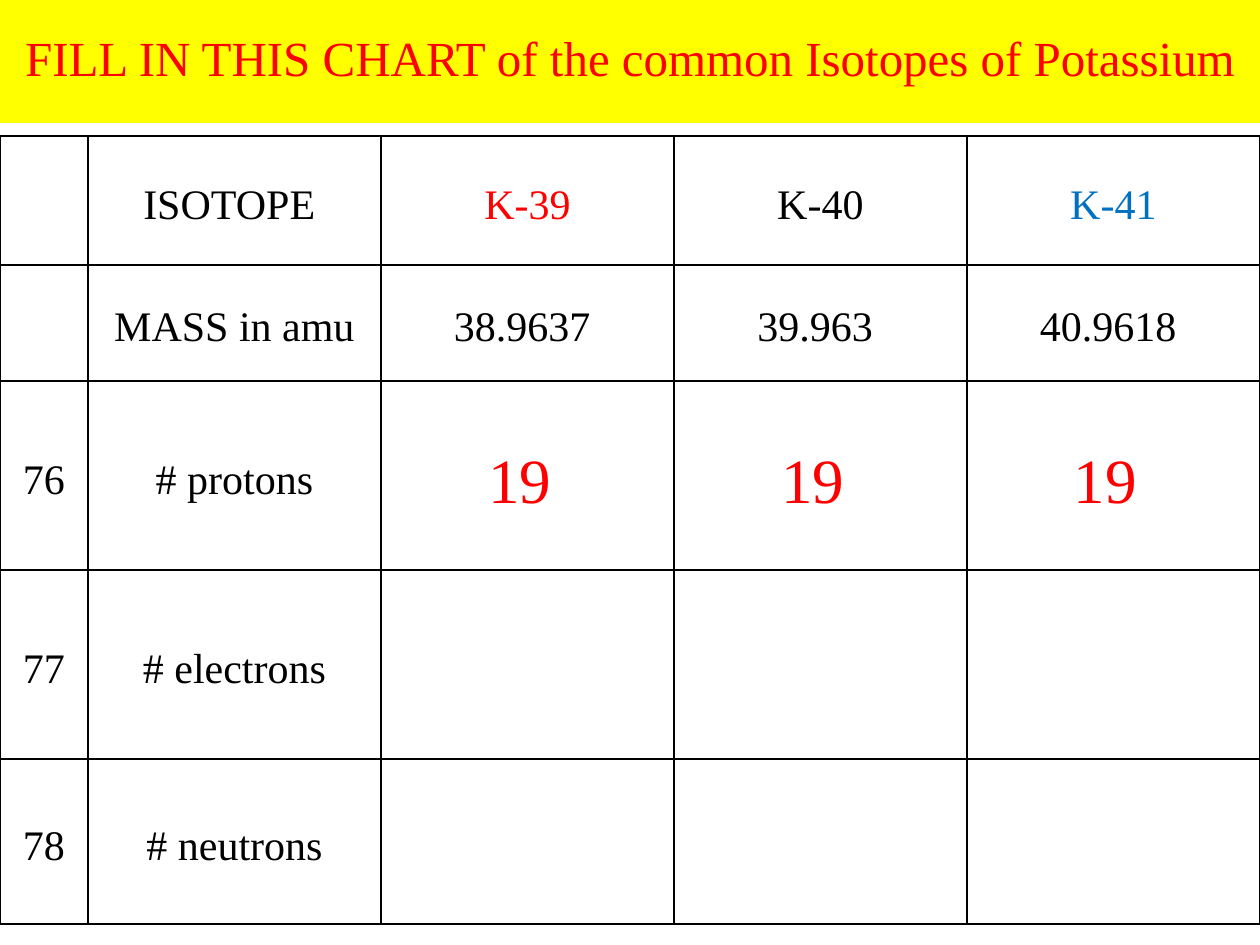
from lxml import etree
from pptx import Presentation
from pptx import util as u
from pptx.dml.color import RGBColor
from pptx.enum import text
from pptx.oxml import ns

BLACK = RGBColor(0x00, 0x00, 0x00)
RED = RGBColor(0xFF, 0x00, 0x00)
BLUE = RGBColor(0x00, 0x70, 0xC0)
YELLOW = RGBColor(0xFF, 0xFF, 0x00)

COLUMN_WIDTHS = [88] + [293] * 4
ROW_HEIGHTS = [129, 116, 189, 189, 165]
ROWS = [
    ["", "ISOTOPE ", "K-39", "K-40", "K-41"],
    ["", "MASS in amu", "38.9637 ", "39.963 ", "40.9618 "],
    ["76", "# protons", "19 ", "19 ", "19 "],
    ["77", "# electrons", "", "", ""],
    ["78", "# neutrons", "", "", ""],
]
ISOTOPE_COLORS = {"K-39": RED, "K-41": BLUE}


def px(length):
    return u.Emu(round(length * 914400 / 126))


class SlideBuilder:
    font = "Times New Roman"
    cell_margin = 5

    def __init__(self, slide):
        self.slide = slide

    def add_run(self, paragraph, content, size, color):
        paragraph.alignment = text.PP_ALIGN.CENTER
        run = paragraph.add_run()
        run.text = content
        run.font.name = self.font
        run.font.size = u.Pt(size)
        run.font.color.rgb = color

    def title(self, content, width, height):
        shape = self.slide.shapes.title
        shape.left, shape.top = px(0), px(0)
        shape.width, shape.height = px(width), px(height)
        shape.fill.solid()
        shape.fill.fore_color.rgb = YELLOW
        frame = shape.text_frame
        frame.auto_size = text.MSO_AUTO_SIZE.NONE
        frame.vertical_anchor = text.MSO_ANCHOR.TOP
        frame.margin_top = px(28)
        self.add_run(frame.paragraphs[0], content, 28, RED)

    def table(self, top):
        frame = self.slide.shapes.add_table(
            len(ROWS), len(COLUMN_WIDTHS), px(0), px(top),
            px(sum(COLUMN_WIDTHS)), px(sum(ROW_HEIGHTS)))
        table = frame.table
        table.first_row = table.horz_banding = False
        for column, width in zip(table.columns, COLUMN_WIDTHS):
            column.width = px(width)
        for row, height, contents in zip(table.rows, ROW_HEIGHTS, ROWS):
            row.height = px(height)
            for cell, content in zip(row.cells, contents):
                self.cell(cell, content)

    def cell(self, cell, content):
        cell.fill.background()
        cell.vertical_anchor = text.MSO_ANCHOR.MIDDLE
        cell.margin_left = cell.margin_right = px(self.cell_margin)
        cell.margin_top = cell.margin_bottom = px(self.cell_margin)
        self.borders(cell)
        if content:
            paragraph = cell.text_frame.paragraphs[0]
            paragraph.line_spacing = 1.19
            paragraph.space_after = u.Pt(6)
            is_answer = content.strip() == "19"
            color = RED if is_answer else ISOTOPE_COLORS.get(content, BLACK)
            self.add_run(paragraph, content, 36 if is_answer else 24, color)

    def borders(self, cell):
        properties = cell._tc.get_or_add_tcPr()
        for position, side in enumerate(("L", "R", "T", "B")):
            line = etree.Element(ns.qn(f"a:ln{side}"), w=str(u.Pt(1)))
            fill = etree.SubElement(line, ns.qn("a:solidFill"))
            etree.SubElement(fill, ns.qn("a:srgbClr"), val=str(BLACK))
            properties.insert(position, line)


def main():
    presentation = Presentation()
    presentation.slide_width, presentation.slide_height = px(1260), px(945)
    slide = presentation.slides.add_slide(presentation.slide_layouts[5])
    builder = SlideBuilder(slide)
    builder.title("FILL IN THIS CHART of the common Isotopes of Potassium", 1260, 123)
    builder.table(136)
    presentation.save("out.pptx")


if __name__ == "__main__":
    main()
